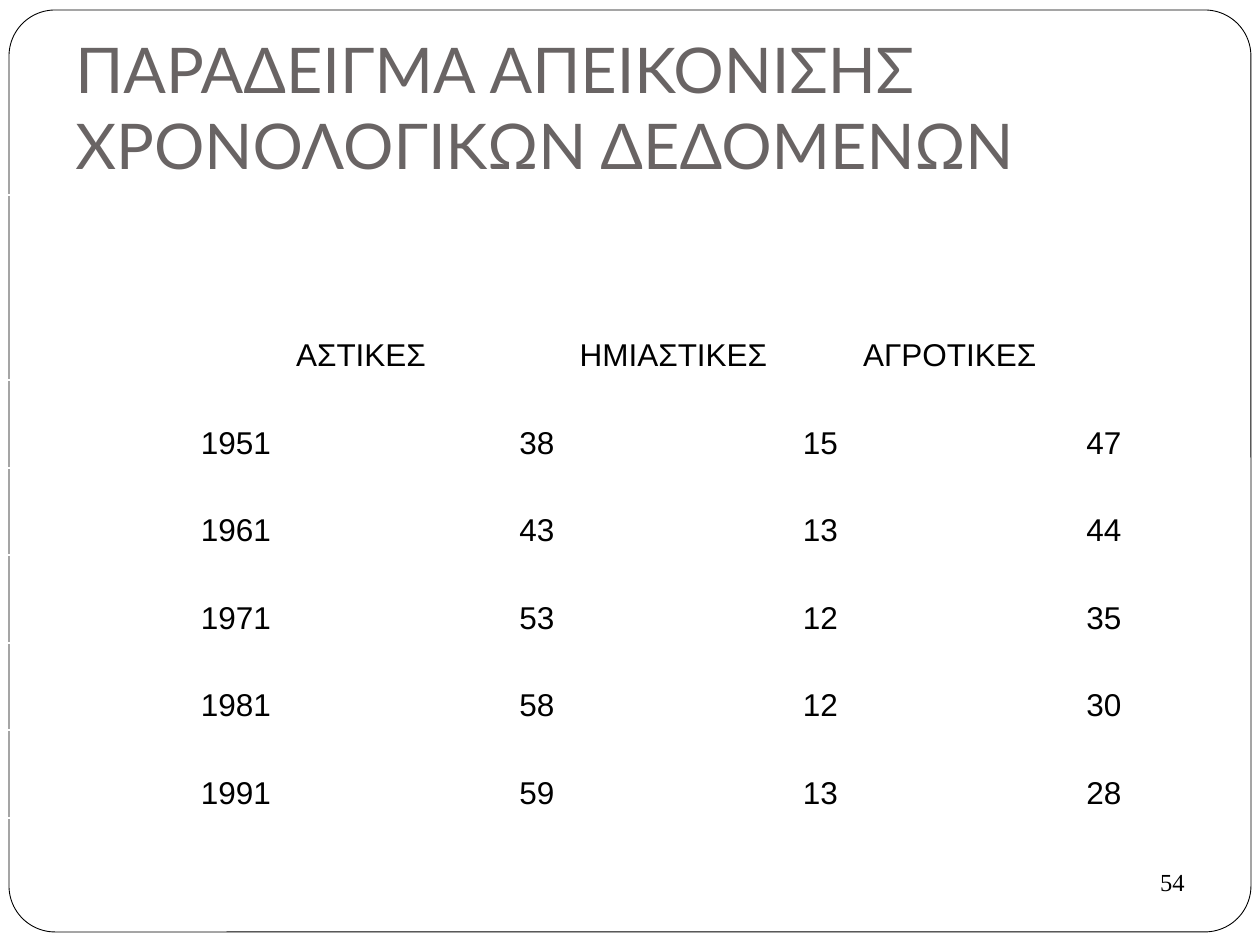
from pptx import Presentation
from pptx.dml.color import RGBColor
from pptx.enum.shapes import MSO_SHAPE as SHAPE
from pptx.enum.text import MSO_ANCHOR as ANCHOR, PP_ALIGN as ALIGN
from pptx.util import Pt

TITLE = "ΠΑΡΑΔΕΙΓΜΑ ΑΠΕΙΚΟΝΙΣΗΣ ΧΡΟΝΟΛΟΓΙΚΩΝ ΔΕΔΟΜΕΝΩΝ"
NUMBER = "54"
ROWS = [
    ("", "ΑΣΤΙΚΕΣ", "ΗΜΙΑΣΤΙΚΕΣ", "ΑΓΡΟΤΙΚΕΣ"),
    ("1951", "38", "15", "47"),
    ("1961", "43", "13", "44"),
    ("1971", "53", "12", "35"),
    ("1981", "58", "12", "30"),
    ("1991", "59", "13", "28"),
]
ROW_HEIGHTS = (185, 88, 87, 88, 87, 88)
COL_WIDTH = 283.5
HANG = 48


def px(n):
    return round(n * 914400 / 126)


def color(value):
    return RGBColor.from_string(value)


def style(p, size, font, ink, align=ALIGN.LEFT):
    p.alignment = align
    for r in p.runs:
        r.font.size = Pt(size)
        r.font.name = font
        r.font.color.rgb = color(ink)


def add_text(s, box, text, anchor, *look):
    tf = s.shapes.add_textbox(*map(px, box)).text_frame
    tf.word_wrap = True
    tf.vertical_anchor = anchor
    tf.text = text
    style(tf.paragraphs[0], *look)
    return tf


prs = Presentation()
prs.slide_width, prs.slide_height = px(1260), px(945)
s = prs.slides.add_slide(prs.slide_layouts[6])

# Rounded frame
sp = s.shapes.add_shape(SHAPE.ROUNDED_RECTANGLE, px(9), px(10), px(1242), px(922))
sp.adjustments[0] = 0.05
sp.shadow.inherit = False
sp.fill.solid()
sp.fill.fore_color.rgb = color("FFFFFF")
sp.line.color.rgb = color("000000")
sp.line.width = Pt(0.5)

# Title
tf = add_text(s, (63, 38, 1134, 157), TITLE, ANCHOR.BOTTOM, 36, "Lato", "696464")
tf.margin_bottom = px(13)

# Table: plain cells, headings left and figures right
table = s.shapes.add_table(len(ROWS), len(ROWS[0]), 0, px(195),
                           px(COL_WIDTH * len(ROWS[0])), px(sum(ROW_HEIGHTS))).table
table.first_row = table.horz_banding = False
for col in table.columns:
    col.width = px(COL_WIDTH)
for i, (values, height) in enumerate(zip(ROWS, ROW_HEIGHTS)):
    table.rows[i].height = px(height)
    for j, value in enumerate(values):
        cell = table.cell(i, j)
        cell.fill.background()
        cell.vertical_anchor = ANCHOR.BOTTOM
        cell.text = value
        p = cell.text_frame.paragraphs[0]
        style(p, 18, "Arial", "000000", ALIGN.RIGHT if i else ALIGN.LEFT)
        pPr = p._p.get_or_add_pPr()
        pPr.set("marL", str(px(HANG)))
        pPr.set("indent", str(-px(HANG)))

# Slide number
add_text(s, (903, 861, 294, 66), NUMBER, ANCHOR.TOP,
         14, "Times New Roman", "000000", ALIGN.RIGHT)

prs.save("out.pptx")
